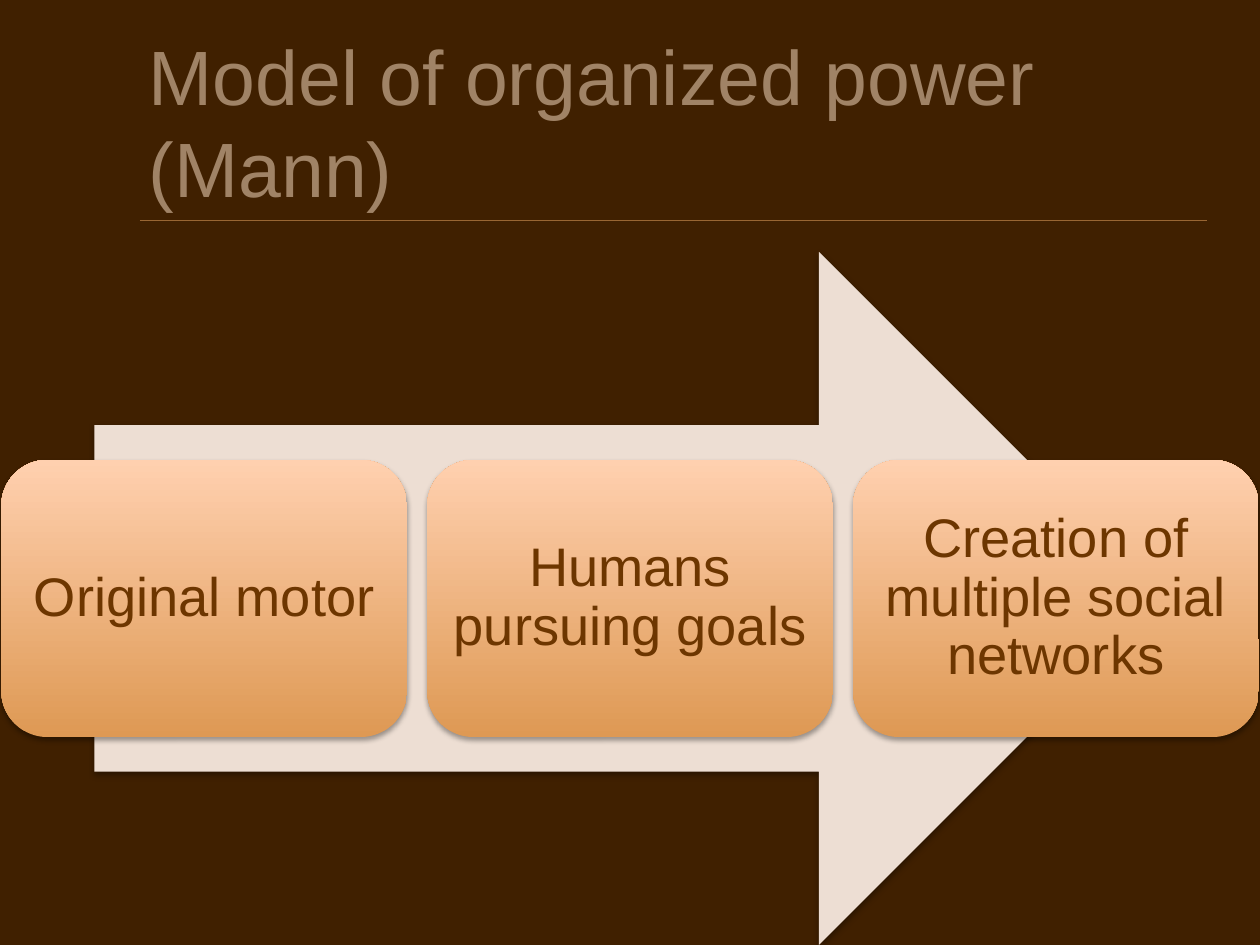
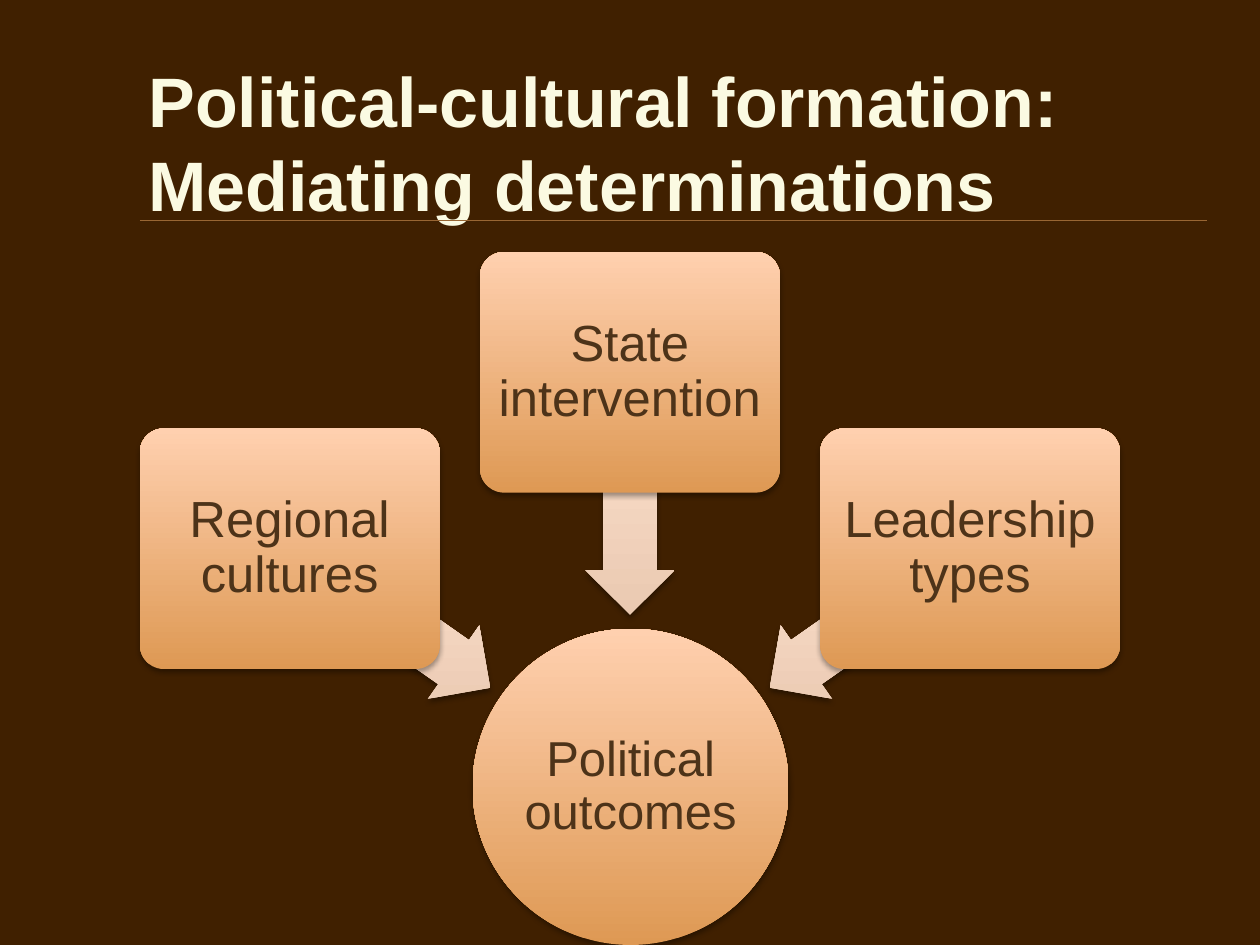
"""Builds two slides on organized power and political-cultural formation."""
from dataclasses import dataclass

from lxml import etree
from pptx import Presentation
from pptx.dml.color import RGBColor
from pptx.enum.shapes import MSO_CONNECTOR, MSO_SHAPE
from pptx.enum.text import MSO_ANCHOR, MSO_AUTO_SIZE, PP_ALIGN
from pptx.oxml.ns import qn
from pptx.util import Pt

EMU_PER_PX = 9144
SLIDE_WIDTH, SLIDE_HEIGHT = 1000, 750
CENTER = SLIDE_WIDTH // 2
TITLE_ONLY = 5

STRAIGHT = MSO_CONNECTOR.STRAIGHT
ROUNDED = MSO_SHAPE.ROUNDED_RECTANGLE
OVAL = MSO_SHAPE.OVAL
LEFT_ARROW = MSO_SHAPE.LEFT_ARROW
RIGHT_ARROW = MSO_SHAPE.RIGHT_ARROW
MIDDLE = MSO_ANCHOR.MIDDLE
NO_FIT = MSO_AUTO_SIZE.NONE
LEFT, CENTERED = PP_ALIGN.LEFT, PP_ALIGN.CENTER


@dataclass(frozen=True)
class Theme:
    """Colours, type sizes and font of the presentation."""
    font: str = "Arial"
    background: str = "402000"
    rule: str = "996633"
    muted_title: str = "A08366"
    bright_title: str = "FBFAE2"
    process_text: str = "6D3600"
    factor_text: str = "4D3319"
    big_arrow: str = "EDDED3"
    box_gradient: tuple = ("DE9954", "FFD0AF")
    arrow_gradient: tuple = ("EAC9B1", "FFE4D2")
    muted_title_size: int = 44
    bright_title_size: int = 40
    process_size: int = 31
    factor_size: int = 29
    outcome_size: int = 28


def px(length):
    """Turn px into EMU."""
    return round(length * EMU_PER_PX)


def assign(target, values):
    """Set each attribute named in a dict."""
    for name, value in values.items():
        setattr(target, name, value)


class Deck:
    """Holds the theme and the current slide and draws its elements."""

    def __init__(self, theme):
        """Open a presentation with the shared size and background."""
        self.theme = theme
        self.presentation = Presentation()
        assign(self.presentation, {"slide_width": px(SLIDE_WIDTH),
                                   "slide_height": px(SLIDE_HEIGHT)})
        fill = self.presentation.slide_master.background.fill
        fill.solid()
        fill.fore_color.rgb = RGBColor.from_string(theme.background)
        self.slide = None

    def add_slide(self, title, top, height, size, color, bold=False):
        """Start a slide with its title and the rule below it."""
        layout = self.presentation.slide_layouts[TITLE_ONLY]
        self.slide = self.presentation.slides.add_slide(layout)
        shape = self.slide.shapes.title
        assign(shape, {"left": px(108), "top": px(top),
                       "width": px(850), "height": px(height)})
        self.set_text(shape, title, size, color, LEFT, bold)
        self.rule(111, 958, 175)

    def set_text(self, shape, text, size, color, alignment, bold=False):
        """Put one formatted paragraph into a shape."""
        frame = shape.text_frame
        assign(frame, {"text": text, "word_wrap": True,
                       "auto_size": NO_FIT, "vertical_anchor": MIDDLE})
        paragraph = frame.paragraphs[0]
        paragraph.alignment = alignment
        assign(paragraph.font, {"name": self.theme.font, "size": Pt(size), "bold": bold})
        paragraph.font.color.rgb = RGBColor.from_string(color)

    def rule(self, left, right, top):
        """Draw a thin horizontal line."""
        connector = self.slide.shapes.add_connector(
            STRAIGHT, px(left), px(top), px(right), px(top))
        connector.line.width = Pt(0.25)
        connector.line.color.rgb = RGBColor.from_string(self.theme.rule)
        etree.SubElement(connector._element.spPr, qn("a:effectLst"))

    def figure(self, kind, left, top, width, height, fill, adjustments=(), rotation=0):
        """Draw a shadowed shape with a plain or gradient fill."""
        shape = self.slide.shapes.add_shape(
            kind, px(left), px(top), px(width), px(height))
        shape.rotation = rotation
        for index, value in enumerate(adjustments):
            shape.adjustments[index] = value
        shape.line.fill.background()
        if isinstance(fill, str):
            shape.fill.solid()
            shape.fill.fore_color.rgb = RGBColor.from_string(fill)
        else:
            self.shade(shape, fill)
        self.cast_shadow(shape)
        return shape

    def shade(self, shape, colors):
        """Fill a shape from bottom to top, whatever its rotation."""
        shape.fill.gradient()
        shape.fill.gradient_angle = 90
        for stop, color in zip(shape.fill.gradient_stops, colors):
            stop.color.rgb = RGBColor.from_string(color)
        shape._element.spPr.find(qn("a:gradFill")).set("rotWithShape", "0")

    def cast_shadow(self, shape):
        """Add a soft shadow below a shape."""
        shape.shadow.inherit = False
        effects = shape._element.spPr.find(qn("a:effectLst"))
        shadow = etree.SubElement(effects, qn("a:outerShdw"), {
            "blurRad": str(Pt(3.1)), "dist": str(Pt(1.8)),
            "dir": "5400000", "rotWithShape": "0"})
        color = etree.SubElement(shadow, qn("a:srgbClr"), val="000000")
        etree.SubElement(color, qn("a:alpha"), val="35000")

    def label(self, shape, text, size, color):
        """Set centred text in a shape without margins."""
        self.set_text(shape, text, size, color, CENTERED)
        shape.text_frame.paragraphs[0].line_spacing = 0.9
        assign(shape.text_frame, dict.fromkeys(
            ("margin_left", "margin_top", "margin_right", "margin_bottom"), 0))


def add_power_model(deck):
    """Show the three steps of organized power on an arrow."""
    theme = deck.theme
    deck.add_slide("Model of organized power (Mann)", 17, 158,
                   theme.muted_title_size, theme.muted_title)
    deck.figure(RIGHT_ARROW, 75, 200, 850, 550, theme.big_arrow)
    steps = ("Original motor", "Humans pursuing goals",
             "Creation of multiple social networks")
    for index, step in enumerate(steps):
        box = deck.figure(ROUNDED, 1 + 338 * index, 365, 322, 220, theme.box_gradient)
        deck.label(box, step, theme.process_size, theme.process_text)


def add_determinations(deck):
    """Show three factors that lead to political outcomes."""
    theme = deck.theme
    deck.add_slide("Political-cultural formation: Mediating determinations", 50, 125,
                   theme.bright_title_size, theme.bright_title, True)
    outcome = deck.figure(OVAL, 375, 499, 251, 251, theme.box_gradient)
    deck.label(outcome, "Political outcomes", theme.outcome_size, theme.factor_text)
    factors = ((-1, "Regional cultures", 340, 455),
               (0, "State intervention", 200, 356),
               (1, "Leadership types", 340, 455))
    box_width, arrow_width = 238, 193
    for side, factor, box_top, arrow_top in factors:
        deck.figure(LEFT_ARROW, CENTER + 190 * side - arrow_width / 2, arrow_top,
                    arrow_width, 71, theme.arrow_gradient, (0.6, 0.5), 270 + 55 * side)
        box = deck.figure(ROUNDED, CENTER + 270 * side - box_width / 2, box_top,
                          box_width, 191, theme.box_gradient, (0.1,))
        deck.label(box, factor, theme.factor_size, theme.factor_text)


def main():
    """Build and save the presentation."""
    deck = Deck(Theme())
    add_power_model(deck)
    add_determinations(deck)
    deck.presentation.save("out.pptx")


if __name__ == "__main__":
    main()
